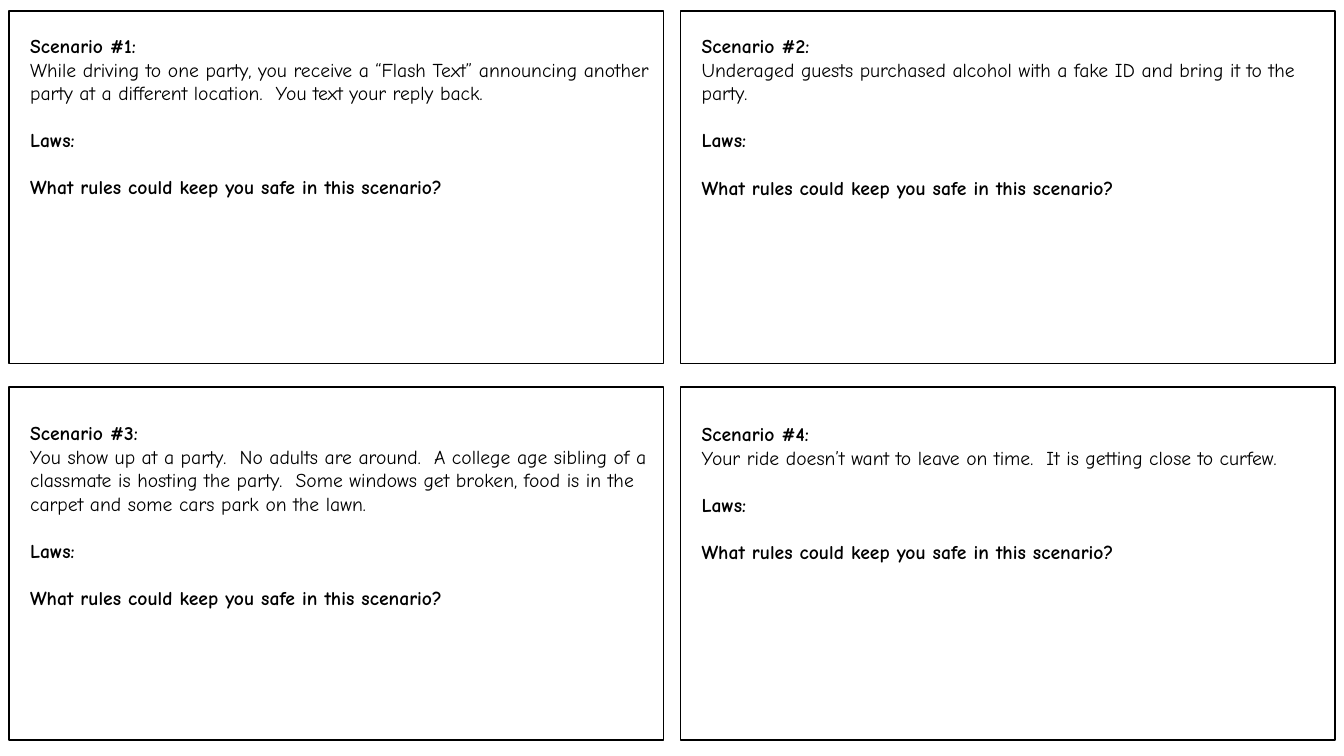
from pptx import Presentation
from pptx.dml.color import RGBColor
from pptx.enum.shapes import MSO_SHAPE
from pptx.enum.text import MSO_AUTO_SIZE
from pptx.util import Inches, Pt

BLACK = RGBColor(0x00, 0x00, 0x00)
WHITE = RGBColor(0xFF, 0xFF, 0xFF)
FONT = "Comic Neue"
TEXT_SIZE = Pt(14)
SECTION_GAP = Pt(16.8)

CARD_LEFT, CARD_TOP = 0.09, 0.11
CARD_WIDTH, CARD_HEIGHT = 6.49, 3.5
COLUMN_STEP, ROW_STEP = 6.66, 3.73
TEXT_INSET, TEXT_WIDTH = 0.11, 6.38

SCENARIOS = [
    ("While driving to one party, you receive a “Flash Text” announcing another "
     "party at a different location.  You text your reply back.", 0.29, 2.46),
    ("Underaged guests purchased alcohol with a fake ID and bring it to the party.",
     0.29, 1.75),
    ("You show up at a party.  No adults are around.  A college age sibling of a "
     "classmate is hosting the party.  Some windows get broken, food is in the "
     "carpet and some cars park on the lawn.", 4.13, 1.99),
    ("Your ride doesn’t want to leave on time.  It is getting close to curfew.",
     4.14, 1.75),
]


def add_card(slide, left, top):
    card = slide.shapes.add_shape(
        MSO_SHAPE.RECTANGLE, Inches(left), Inches(top),
        Inches(CARD_WIDTH), Inches(CARD_HEIGHT))
    card.shadow.inherit = False
    card.fill.solid()
    card.fill.fore_color.rgb = WHITE
    card.line.color.rgb = BLACK
    card.line.width = Pt(1)


def add_scenario_text(slide, number, story, left, top, height):
    box = slide.shapes.add_textbox(
        Inches(left), Inches(top), Inches(TEXT_WIDTH), Inches(height))
    text_frame = box.text_frame
    text_frame.word_wrap = True
    text_frame.auto_size = MSO_AUTO_SIZE.SHAPE_TO_FIT_TEXT
    text_frame.text = "\n".join([
        f"Scenario #{number}:", story, "Laws:",
        "What rules could keep you safe in this scenario?"])
    for index, paragraph in enumerate(text_frame.paragraphs):
        paragraph.space_before = SECTION_GAP if index >= 2 else Pt(0)
        font = paragraph.runs[0].font
        font.name = FONT
        font.size = TEXT_SIZE
        font.bold = index != 1
        font.color.rgb = BLACK


def main():
    """Build a slide of four party scenario cards."""
    presentation = Presentation()
    presentation.slide_width = Inches(13.33)
    presentation.slide_height = Inches(7.5)
    slide = presentation.slides.add_slide(presentation.slide_layouts[6])
    for index, (story, text_top, text_height) in enumerate(SCENARIOS):
        row, column = divmod(index, 2)
        left = CARD_LEFT + column * COLUMN_STEP
        add_card(slide, left, CARD_TOP + row * ROW_STEP)
        add_scenario_text(
            slide, index + 1, story, left + TEXT_INSET, text_top, text_height)
    presentation.save("out.pptx")


if __name__ == "__main__":
    main()
